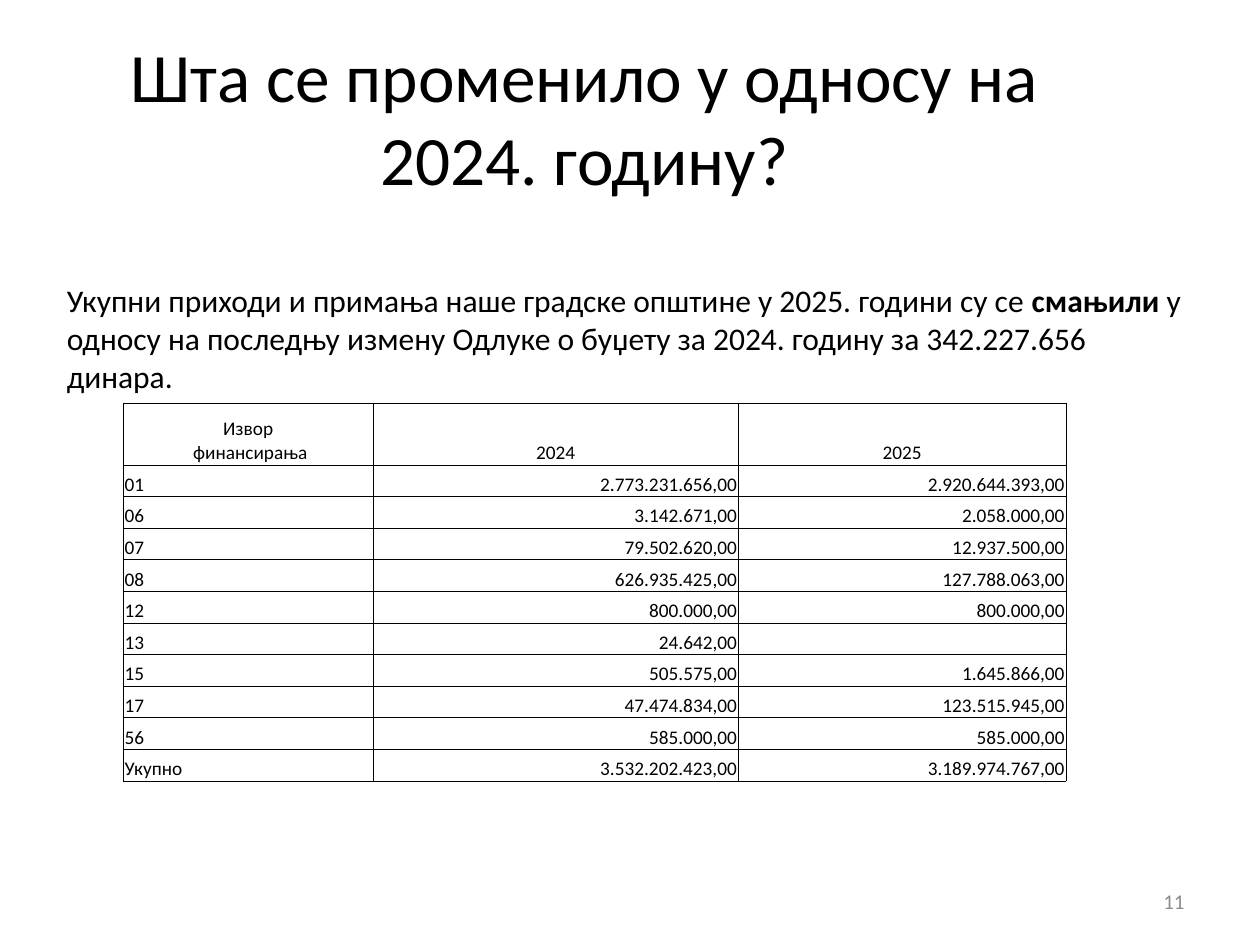
import dataclasses

import lxml.etree
import pptx
import pptx.dml.color
import pptx.enum.text
import pptx.oxml.ns
import pptx.util

Inches = pptx.util.Inches
ALIGN = pptx.enum.text.PP_ALIGN
ANCHOR = pptx.enum.text.MSO_ANCHOR
qn = pptx.oxml.ns.qn


@dataclasses.dataclass(frozen=True)
class Theme:
    font: str = "Calibri"
    text: str = "000000"
    muted: str = "8C8C8C"
    border: str = "000000"
    border_width: float = 0.5
    title_size: float = 39.6
    body_size: float = 18
    table_size: float = 11
    number_size: float = 12


THEME = Theme()

HEADER = ("Извор\v финансирања", "2024", "2025")
REVENUES = [
    ("01", "2.773.231.656,00", "2.920.644.393,00"),
    ("06", "3.142.671,00", "2.058.000,00"),
    ("07", "79.502.620,00", "12.937.500,00"),
    ("08", "626.935.425,00", "127.788.063,00"),
    ("12", "800.000,00", "800.000,00"),
    ("13", "24.642,00", ""),
    ("15", "505.575,00", "1.645.866,00"),
    ("17", "47.474.834,00", "123.515.945,00"),
    ("56", "585.000,00", "585.000,00"),
    ("Укупно", "3.532.202.423,00", "3.189.974.767,00"),
]


def place(sp, box):
    sp.left, sp.top, sp.width, sp.height = (Inches(v) for v in box)


def format_paragraph(p, size, color=THEME.text, align=ALIGN.LEFT):
    p.alignment = align
    for r in p.runs:
        r.font.name = THEME.font
        r.font.size = pptx.util.Pt(size)
        r.font.color.rgb = pptx.dml.color.RGBColor.from_string(color)


def add_title(s, box, text):
    sp = s.shapes.title
    place(sp, box)
    tf = sp.text_frame
    tf.text = text
    tf.vertical_anchor = ANCHOR.MIDDLE
    format_paragraph(tf.paragraphs[0], THEME.title_size, align=ALIGN.CENTER)


def add_summary(s, box, parts):
    """Body paragraph made of (text, bold) parts, without a bullet."""
    sp = s.placeholders[1]
    place(sp, box)
    p = sp.text_frame.paragraphs[0]
    for text, bold in parts:
        r = p.add_run()
        r.text = text
        r.font.bold = bold
    format_paragraph(p, THEME.body_size)
    pPr = p._p.get_or_add_pPr()
    pPr.set("marL", "0")
    pPr.set("indent", "0")
    lxml.etree.SubElement(pPr, qn("a:buNone"))


def add_borders(cell):
    tcPr = cell._tc.get_or_add_tcPr()
    width = str(int(pptx.util.Pt(THEME.border_width)))
    for side in ("L", "R", "T", "B"):
        ln = lxml.etree.SubElement(tcPr, qn(f"a:ln{side}"), w=width)
        fill = lxml.etree.SubElement(ln, qn("a:solidFill"))
        lxml.etree.SubElement(fill, qn("a:srgbClr"), val=THEME.border)


def format_cell(cell, text, align):
    add_borders(cell)
    cell.fill.background()
    cell.margin_left = cell.margin_right = cell.margin_top = Inches(0.01)
    cell.margin_bottom = 0
    cell.vertical_anchor = ANCHOR.BOTTOM
    cell.text_frame.text = text
    p = cell.text_frame.paragraphs[0]
    format_paragraph(p, THEME.table_size, align=align)
    # The end mark keeps an empty cell from stretching its row
    lxml.etree.SubElement(p._p, qn("a:endParaRPr"), sz=str(THEME.table_size * 100))


def add_revenue_table(s, box, col_widths, header_height):
    rows = [HEADER] + REVENUES
    frame = s.shapes.add_table(len(rows), len(HEADER), *(Inches(v) for v in box))
    table = frame.table
    table.first_row = table.horz_banding = False
    for col, width in zip(table.columns, col_widths):
        col.width = Inches(width)
    row_height = (box[3] - header_height) / len(REVENUES)
    for i, values in enumerate(rows):
        table.rows[i].height = Inches(row_height if i else header_height)
        for j, text in enumerate(values):
            if i == 0:
                align = ALIGN.CENTER
            else:
                align = ALIGN.RIGHT if j else ALIGN.LEFT
            format_cell(table.cell(i, j), text, align)


def add_slide_number(s, box, number):
    sp = s.shapes.add_textbox(*(Inches(v) for v in box))
    tf = sp.text_frame
    tf.word_wrap = True
    tf.vertical_anchor = ANCHOR.MIDDLE
    tf.text = number
    format_paragraph(tf.paragraphs[0], THEME.number_size, THEME.muted, ALIGN.RIGHT)


def main():
    prs = pptx.Presentation()
    prs.slide_width, prs.slide_height = Inches(10), Inches(7.5)
    s = prs.slides.add_slide(prs.slide_layouts[1])

    # Heading and summary
    add_title(s, (0.28, 0.3, 8.72, 1.25), "Шта се променило у односу на 2024. годину?")
    add_summary(s, (0.43, 2.18, 9.06, 4.17), [
        ("Укупни приходи и примања наше градске општине у 2025. години су се ", False),
        ("смањили ", True),
        ("у односу на последњу измену Одлуке о буџету за 2024. годину "
         "за 342.227.656 динара.", False),
    ])

    # Revenue by source of funding
    add_revenue_table(s, (0.98, 3.2, 7.48, 3), (1.98, 2.9, 2.6), 0.49)

    # Footer
    add_slide_number(s, (7.17, 6.95, 2.33, 0.4), "11")
    prs.save("out.pptx")


if __name__ == "__main__":
    main()
